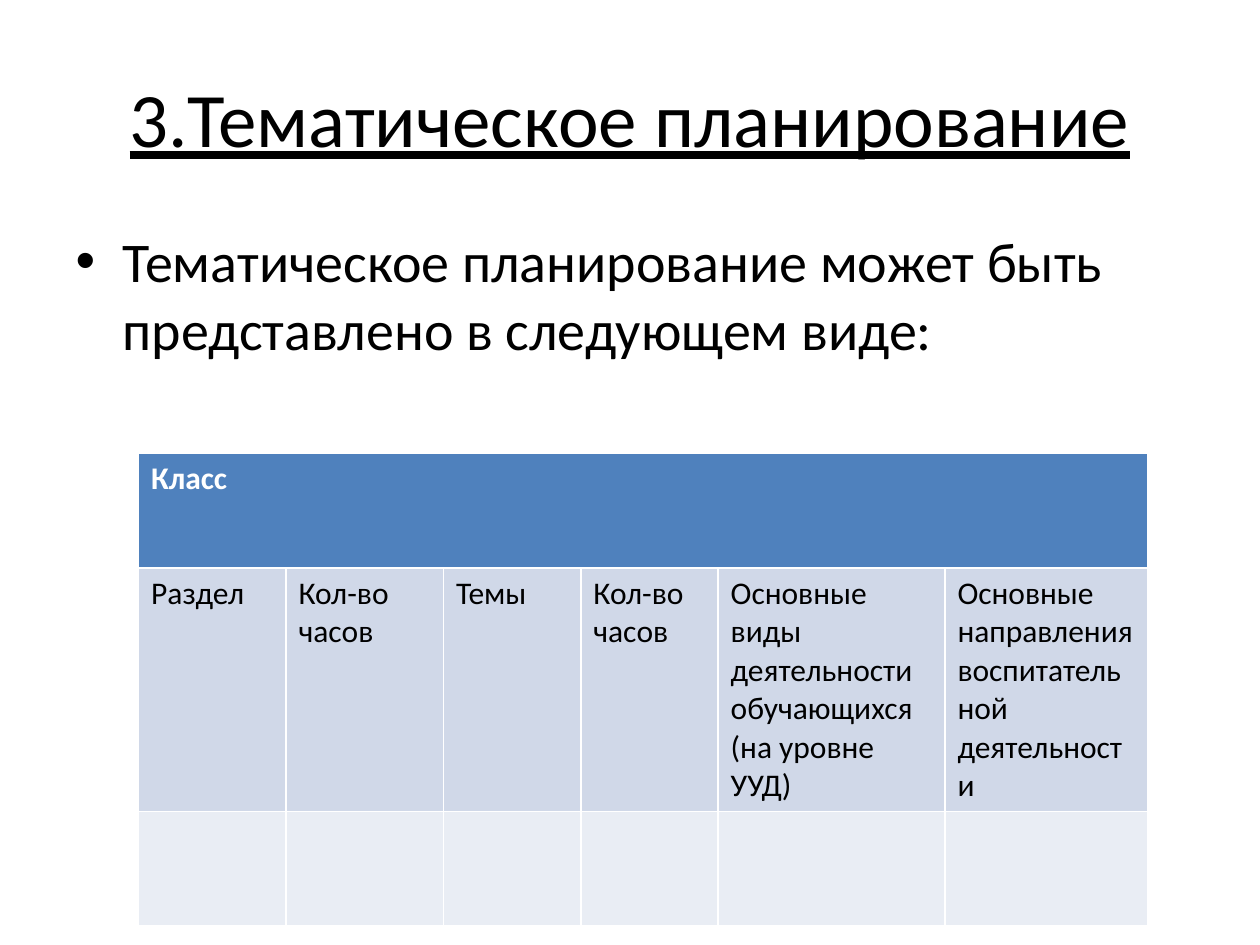
from pptx import Presentation
from pptx.dml.color import RGBColor as RGB
from pptx.enum.text import MSO_ANCHOR as Anchor, PP_ALIGN as Align
from pptx.util import Inches, Pt

BLACK = RGB(0x00, 0x00, 0x00)
WHITE = RGB(0xFF, 0xFF, 0xFF)
BLUE = RGB(0x4F, 0x81, 0xBD)
BAND = RGB(0xD0, 0xD8, 0xE8)
PALE = RGB(0xE9, 0xED, 0xF4)

FONT = "Calibri"
WIDE, HIGH = Inches(10), Inches(7.5)
COLS = (1.17, 1.25, 1.09, 1.09, 1.8, 1.61)
ROWS = (0.91, 1.9, 0.91)
HEADS = (
    "Раздел",
    "Кол-во часов",
    "Темы",
    "Кол-во часов",
    "Основные виды деятельности обучающихся (на уровне УУД)",
    "Основные направления воспитательной деятельности",
)


def style(frame, size, color=BLACK, bold=False, under=False):
    """Format every run of a text frame."""
    for para in frame.paragraphs:
        for run in para.runs:
            font = run.font
            font.name, font.size, font.bold = FONT, Pt(size), bold
            font.underline = under
            font.color.rgb = color


def place(shape, box):
    """Put a shape in a box given as shares of the slide."""
    left, top, width, height = box
    shape.left, shape.top = int(WIDE * left), int(HIGH * top)
    shape.width, shape.height = int(WIDE * width), int(HIGH * height)


def add_title(slide, box):
    """Fill the title placeholder with the underlined heading."""
    title = slide.shapes.title
    place(title, box)
    frame = title.text_frame
    frame.text = "3.Тематическое планирование"
    frame.vertical_anchor = Anchor.MIDDLE
    frame.paragraphs[0].alignment = Align.CENTER
    style(frame, 44, under=True)


def add_body(slide, box):
    """Fill the body placeholder with the bulleted lead-in."""
    body = slide.placeholders[1]
    place(body, box)
    frame = body.text_frame
    frame.text = "Тематическое планирование может быть представлено в следующем виде:"
    style(frame, 32)


def add_plan(slide, left, top):
    """Draw the planning table from its top left corner, in shares of the slide."""
    shape = slide.shapes.add_table(
        len(ROWS), len(COLS), int(WIDE * left), int(HIGH * top),
        Inches(sum(COLS)), Inches(sum(ROWS)))
    table = shape.table
    for col, width in zip(table.columns, COLS):
        col.width = Inches(width)
    for row, height, fill in zip(table.rows, ROWS, (BLUE, BAND, PALE)):
        row.height = Inches(height)
        for cell in row.cells:
            cell.fill.solid()
            cell.fill.fore_color.rgb = fill
    band = table.cell(0, 0)
    band.merge(table.cell(0, len(COLS) - 1))
    band.text_frame.text = "Класс"
    style(band.text_frame, 18, WHITE, bold=True)
    for cell, head in zip(table.rows[1].cells, HEADS):
        cell.text_frame.text = head
        style(cell.text_frame, 18)


def main():
    """Build and save the slide."""
    deck = Presentation()
    deck.slide_width, deck.slide_height = WIDE, HIGH
    slide = deck.slides.add_slide(deck.slide_layouts[1])
    add_title(slide, (0.05, 0.04, 0.9, 1 / 6))
    add_body(slide, (0.05, 7 / 30, 0.9, 0.66))
    add_plan(slide, 0.11, 0.48)
    deck.save("out.pptx")


if __name__ == "__main__":
    main()
